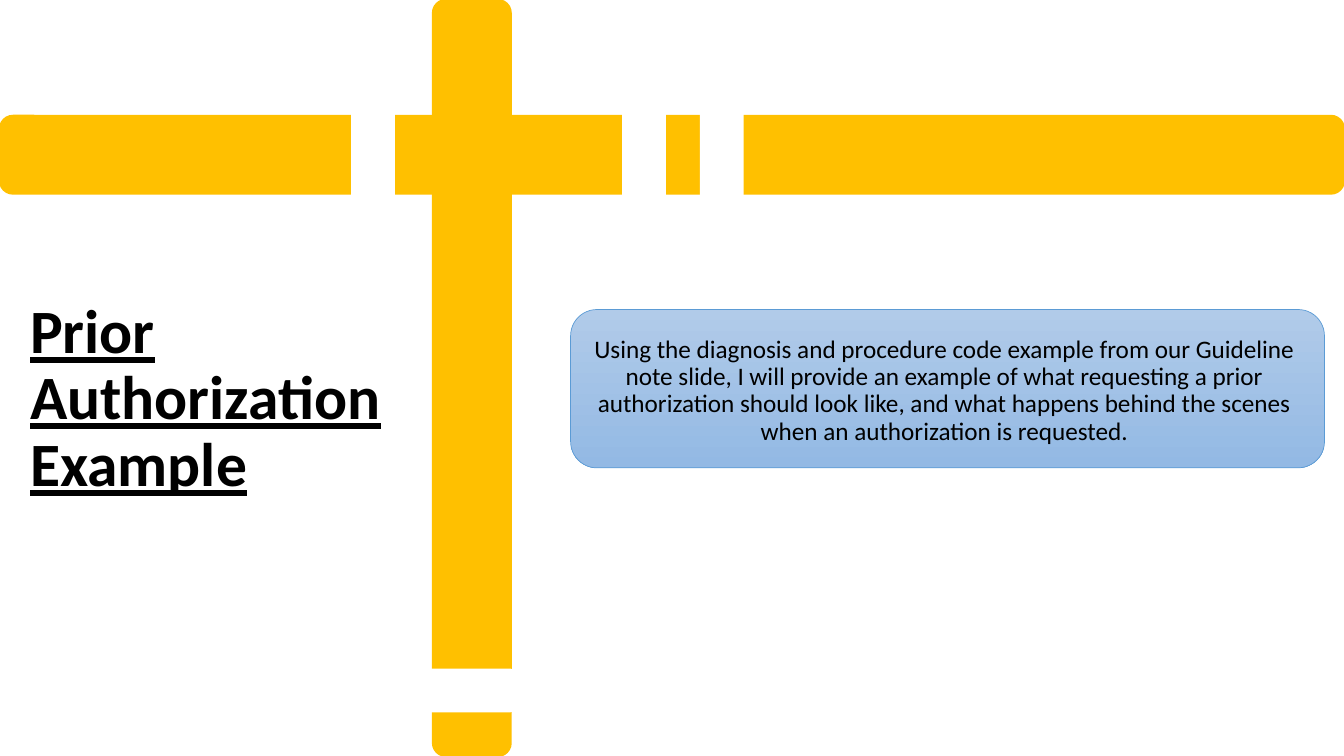
import dataclasses

import pptx
import pptx.dml.color
import pptx.enum.shapes
import pptx.enum.text
import pptx.util

Cm = pptx.util.Cm
Pt = pptx.util.Pt


@dataclasses.dataclass(frozen=True)
class Theme:
    """Colours, font and type sizes of the slide."""
    gold: str = "FFC000"
    white: str = "FFFFFF"
    black: str = "000000"
    edge: str = "5B9BD5"
    light: str = "B1CBE9"
    deep: str = "93B9E4"
    font: str = "Calibri"
    head: int = 44
    body: int = 18


THEME = Theme()


def color(code):
    """Turn a hex code into a colour."""
    return pptx.dml.color.RGBColor.from_string(code)


def add_round(slide, box, line, width, fill=None, turn=0):
    """Add a rounded rectangle in the box, turned by some degrees."""
    kind = pptx.enum.shapes.MSO_SHAPE.ROUNDED_RECTANGLE
    shape = slide.shapes.add_shape(kind, *map(Cm, box))
    shape.shadow.inherit = False
    shape.rotation = turn
    shape.line.color.rgb = color(line)
    shape.line.width = Pt(width)
    if fill:
        shape.fill.solid()
        shape.fill.fore_color.rgb = color(fill)
    return shape


def add_text(slide, box, words, size):
    """Add a wrapped text box and return its frame, paragraph and font."""
    frame = slide.shapes.add_textbox(*map(Cm, box)).text_frame
    frame.word_wrap = True
    para = frame.paragraphs[0]
    para.text = words
    para.line_spacing = 0.9
    font = para.runs[0].font
    font.name = THEME.font
    font.size = Pt(size)
    font.color.rgb = color(THEME.black)
    return frame, para, font


def add_cross(slide, box):
    """Draw two gold bars that cross, with white gaps cut into them."""
    left, top, wide, high = box
    thick = 1.96
    mid_x, mid_y = left + 11.89, top + 3.9
    bars = [
        (mid_x, top + high / 2, high, thick, 90),
        (left + wide / 2, mid_y, wide, thick, 0),
    ]
    gaps = [
        (left + 9.4, mid_y, 1.07, 2.54, 0),
        (left + 11.76, top + 17.4, 1.07, 2.54, 90),
        (left + 18.19, mid_y, 1.07, 3.05, 0),
        (left + 16.23, mid_y, 1.07, 3.05, 0),
    ]
    for parts, tone, width in ((bars, THEME.gold, 1.5), (gaps, THEME.white, 1)):
        for x, y, span, depth, turn in parts:
            place = (x - span / 2, y - depth / 2, span, depth)
            add_round(slide, place, tone, width, tone, turn)


def add_title(slide, box):
    """Write the underlined title in the middle of the box."""
    frame, _, font = add_text(slide, box, "Prior Authorization Example", THEME.head)
    frame.vertical_anchor = pptx.enum.text.MSO_ANCHOR.MIDDLE
    font.bold = True
    font.underline = True


def add_panel(slide, box):
    """Draw the blue panel and its centred text."""
    left, top, wide, high = box
    fill = add_round(slide, box, THEME.edge, 0.5).fill
    fill.gradient()
    fill.gradient_angle = 270
    for stop, tone in zip(fill.gradient_stops, (THEME.light, THEME.deep)):
        stop.color.rgb = color(tone)
    words = (
        "Using the diagnosis and procedure code example from our Guideline "
        "note slide, I will provide an example of what requesting a prior "
        "authorization should look like, and what happens behind the scenes "
        "when an authorization is requested."
    )
    place = (left - 0.08, top + 0.56, wide, high - 0.59)
    _, para, _ = add_text(slide, place, words, THEME.body)
    para.alignment = pptx.enum.text.PP_ALIGN.CENTER
    para.space_before = Pt(10)


def main():
    """Build the slide and save it."""
    deck = pptx.Presentation()
    wide, high = 33.87, 19.05
    deck.slide_width, deck.slide_height = Cm(wide), Cm(high)
    slide = deck.slides.add_slide(deck.slide_layouts[6])
    add_cross(slide, (0, 0, wide, high))
    add_panel(slide, (14.38, 7.8, 19, 3.99))
    add_title(slide, (0.51, 5.84, 10.69, 8.48))
    deck.save("out.pptx")


if __name__ == "__main__":
    main()
